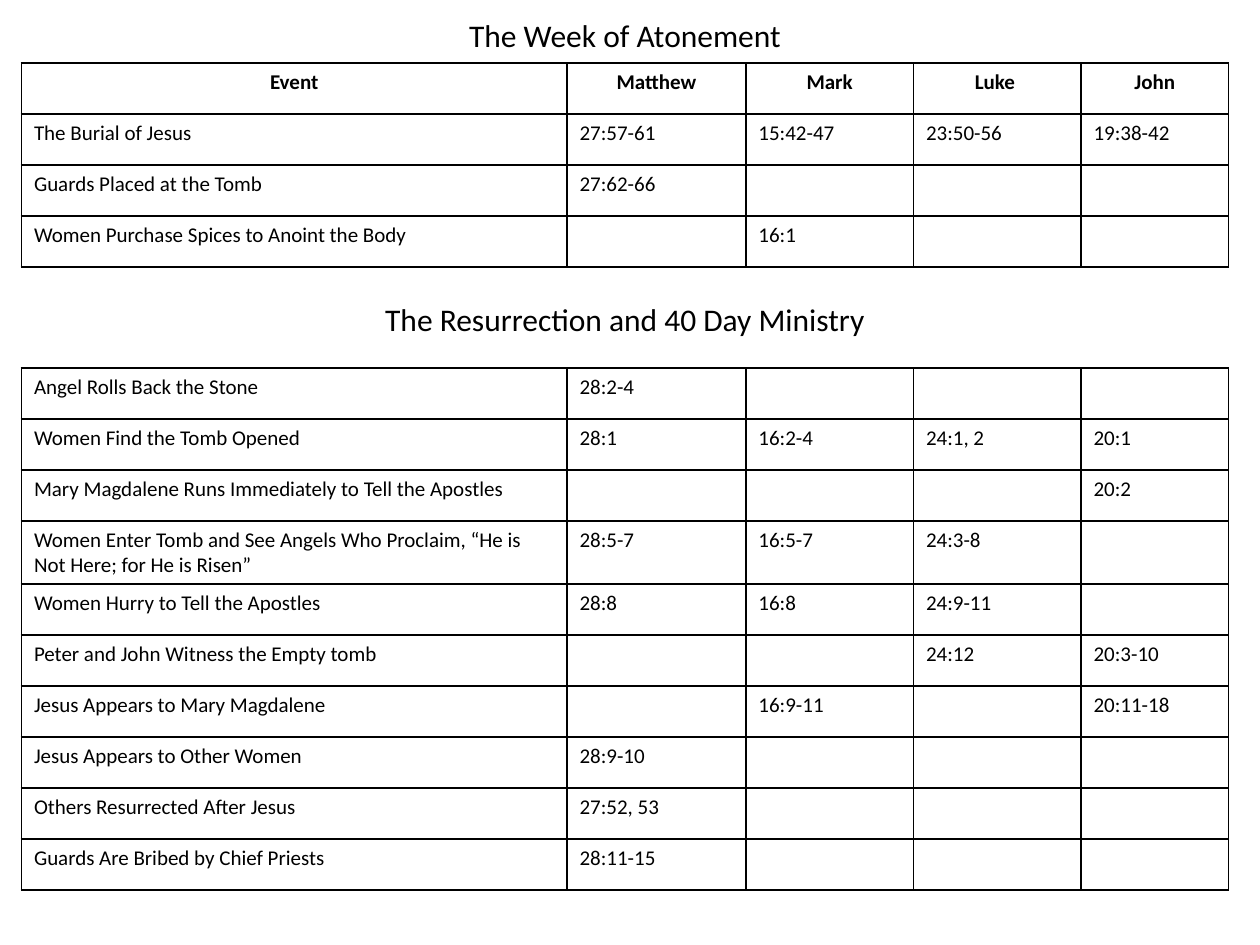
from lxml import etree
from pptx import Presentation
from pptx.dml.color import RGBColor
from pptx.enum.text import MSO_ANCHOR, MSO_AUTO_SIZE, PP_ALIGN
from pptx.oxml.ns import qn
from pptx.util import Inches, Pt

CENTER = PP_ALIGN.CENTER
LEFT = PP_ALIGN.LEFT
TOP = MSO_ANCHOR.TOP
GROW = MSO_AUTO_SIZE.SHAPE_TO_FIT_TEXT

FONT = "Calibri"
INK = "000000"
TITLE_SIZE = 18
CELL_SIZE = 12
MARGIN = 0.17
COLUMNS = [4.33, 1.42, 1.33, 1.33, 1.17]
WIDTH = sum(COLUMNS)
ROW_HEIGHT = 1.62 / 4
TITLE_HEIGHT = 0.4

ATONEMENT = [
    ["Event", "Matthew", "Mark", "Luke ", "John"],
    ["The Burial of Jesus", "27:57-61", "15:42-47", "23:50-56", "19:38-42"],
    ["Guards Placed at the Tomb", "27:62-66", "", "", ""],
    ["Women Purchase Spices to Anoint the Body", "", "16:1", "", ""],
]
RESURRECTION = [
    ["Angel Rolls Back the Stone", "28:2-4", "", "", ""],
    ["Women Find the Tomb Opened", "28:1", "16:2-4", "24:1, 2", "20:1"],
    ["Mary Magdalene Runs Immediately to Tell the Apostles", "", "", "", "20:2"],
    ["Women Enter Tomb and See Angels Who Proclaim, “He is Not Here; for He is Risen”",
     "28:5-7", "16:5-7", "24:3-8", ""],
    ["Women Hurry to Tell the Apostles", "28:8", "16:8", "24:9-11", ""],
    ["Peter and John Witness the Empty tomb", "", "", "24:12", "20:3-10"],
    ["Jesus Appears to Mary Magdalene", "", "16:9-11", "", "20:11-18"],
    ["Jesus Appears to Other Women", "28:9-10", "", "", ""],
    ["Others Resurrected After Jesus", "27:52, 53", "", "", ""],
    ["Guards Are Bribed by Chief Priests", "28:11-15", "", "", ""],
]


def color(value):
    return RGBColor.from_string(value)


def add_span(para, text, size, bold=False):
    span = para.add_run()
    span.text = text
    span.font.name = FONT
    span.font.size = Pt(size)
    span.font.bold = bold
    span.font.color.rgb = color(INK)


def fill_title(box, top, text):
    box.left, box.top = Inches(MARGIN), Inches(top)
    box.width, box.height = Inches(WIDTH), Inches(TITLE_HEIGHT)
    frame = box.text_frame
    frame.word_wrap = True
    frame.auto_size = GROW
    frame.vertical_anchor = TOP
    para = frame.paragraphs[0]
    para.alignment = CENTER
    para.line_spacing = 1.0
    para.space_before = Pt(0)
    add_span(para, text, TITLE_SIZE)


def set_borders(cell):
    properties = cell._tc.get_or_add_tcPr()
    for side in ("lnL", "lnR", "lnT", "lnB"):
        line = etree.SubElement(properties, qn(f"a:{side}"), w=str(Pt(1)))
        fill = etree.SubElement(line, qn("a:solidFill"))
        etree.SubElement(fill, qn("a:srgbClr"), val=INK)


def fill_cell(cell, text, header):
    set_borders(cell)
    cell.fill.background()
    para = cell.text_frame.paragraphs[0]
    para.alignment = CENTER if header else LEFT
    if text:
        add_span(para, text, CELL_SIZE, header)
    else:
        etree.SubElement(para._p, qn("a:endParaRPr"), sz=str(CELL_SIZE * 100))


def add_grid(page, top, rows, has_header=False):
    box = page.shapes.add_table(
        len(rows), len(COLUMNS), Inches(MARGIN), Inches(top),
        Inches(WIDTH), Inches(ROW_HEIGHT * len(rows)))
    table = box.table
    table.first_row = has_header
    table.horz_banding = False
    for column, width in zip(table.columns, COLUMNS):
        column.width = Inches(width)
    for index, texts in enumerate(rows):
        table.rows[index].height = Inches(ROW_HEIGHT)
        for cell, text in zip(table.rows[index].cells, texts):
            fill_cell(cell, text, has_header and index == 0)


def main():
    deck = Presentation()
    deck.slide_width, deck.slide_height = Inches(10), Inches(7.5)
    page = deck.slides.add_slide(deck.slide_layouts.get_by_name("Title Only"))
    fill_title(page.shapes.title, 0.08, "The Week of Atonement")
    add_grid(page, 0.5, ATONEMENT, has_header=True)
    subtitle = page.shapes.add_textbox(0, 0, 0, 0)
    fill_title(subtitle, 2.33, "The Resurrection and 40 Day Ministry")
    add_grid(page, 2.92, RESURRECTION)
    deck.save("out.pptx")


if __name__ == "__main__":
    main()
